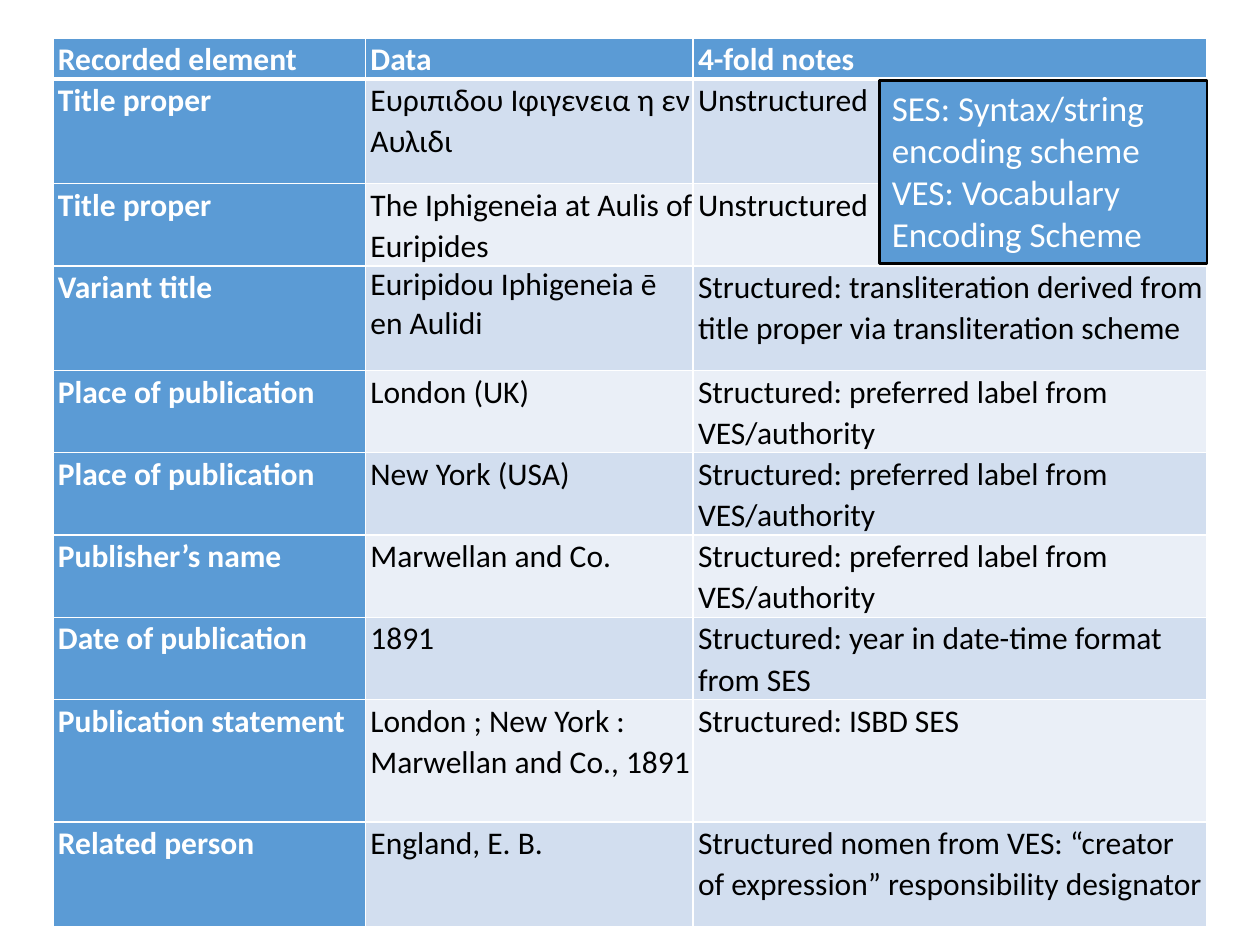
from lxml import etree
from pptx import Presentation
from pptx.dml.color import RGBColor
from pptx.enum import shapes, text
from pptx.oxml import ns
from pptx.util import Inches, Pt

THEME = {
    "font": "Calibri", "table_size": 18, "note_size": 20,
    "accent": "5B9BD5", "bands": ("D2DEEF", "EAEFF7"),
    "light": "FFFFFF", "dark": "000000",
}
AUTHORITY = "Structured: preferred label from VES/authority"
HEADER = ("Recorded element", "Data", "4-fold notes")
# Row height, then the three cells
RECORDS = [
    (0.83, "Title proper", "Ευριπιδου Ιφιγενεια η εν Αυλιδι", "Unstructured"),
    (0.65, "Title proper", "The Iphigeneia at Aulis of Euripides", "Unstructured"),
    (0.83, "Variant title", "Euripidou Iphigeneia ē en Aulidi",
     "Structured: transliteration derived from title proper via transliteration scheme"),
    (0.65, "Place of publication", "London (UK)", AUTHORITY),
    (0.65, "Place of publication", "New York (USA)", AUTHORITY),
    (0.65, "Publisher’s name", "Marwellan and Co.", AUTHORITY),
    (0.65, "Date of publication", "1891",
     "Structured: year in date-time format from SES"),
    (0.97, "Publication statement", "London ; New York : Marwellan and Co., 1891",
     "Structured: ISBD SES"),
    (0.83, "Related person", "England, E. B.",
     "Structured nomen from VES: “creator of expression” responsibility designator"),
]
SINGLE_SPACED = (3, 1)  # row and column of the variant title
NOTES = ("SES: Syntax/string encoding scheme", "VES: Vocabulary Encoding Scheme")

LEFT, TOP, HEADER_HEIGHT = 0.42, 0.3, 0.32
COLUMN_WIDTHS = (2.48, 2.6, 4.08)
NOTE_WIDTH, NOTE_HEIGHT = 2.6, 1.45


def colour(name):
    return RGBColor.from_string(name)


def add_text(paragraph, words, size, ink, bold=False):
    run = paragraph.add_run()
    run.text = words
    run.font.name = THEME["font"]
    run.font.size = Pt(size)
    run.font.bold = bold
    run.font.color.rgb = colour(ink)


def set_borders(cell, top, bottom):
    """Draw white borders; top and bottom are widths in points."""
    properties = cell._tc.get_or_add_tcPr()
    for side, width in (("L", 1), ("R", 1), ("T", top), ("B", bottom)):
        line = etree.SubElement(properties, ns.qn(f"a:ln{side}"), w=str(Pt(width)))
        fill = etree.SubElement(line, ns.qn("a:solidFill"))
        etree.SubElement(fill, ns.qn("a:srgbClr"), val=THEME["light"])


def add_record_table(slide):
    rows = [(HEADER_HEIGHT, *HEADER), *RECORDS]
    table = slide.shapes.add_table(
        len(rows), len(COLUMN_WIDTHS), Inches(LEFT), Inches(TOP),
        Inches(sum(COLUMN_WIDTHS)), Inches(sum(row[0] for row in rows))).table
    for column, width in zip(table.columns, COLUMN_WIDTHS):
        column.width = Inches(width)
    for row_index, (height, *values) in enumerate(rows):
        table.rows[row_index].height = Inches(height)
        for column_index, value in enumerate(values):
            cell = table.cell(row_index, column_index)
            heading = row_index == 0 or column_index == 0
            set_borders(cell, 3 if row_index == 1 else 1, 3 if row_index == 0 else 1)
            cell.fill.solid()
            cell.fill.fore_color.rgb = colour(
                THEME["accent"] if heading else THEME["bands"][(row_index - 1) % 2])
            cell.margin_left = Inches(0.04)
            cell.margin_top = cell.margin_right = cell.margin_bottom = 0
            paragraph = cell.text_frame.paragraphs[0]
            if (row_index, column_index) != SINGLE_SPACED:
                paragraph.line_spacing = 1.07
            add_text(paragraph, value, THEME["table_size"],
                     THEME["light"] if heading else THEME["dark"], heading)


def add_scheme_note(slide):
    """Place the abbreviations box flush with the table's right edge."""
    left = LEFT + sum(COLUMN_WIDTHS) - NOTE_WIDTH
    note = slide.shapes.add_shape(
        shapes.MSO_SHAPE.RECTANGLE, Inches(left), Inches(0.64),
        Inches(NOTE_WIDTH), Inches(NOTE_HEIGHT))
    note.shadow.inherit = False
    note.fill.solid()
    note.fill.fore_color.rgb = colour(THEME["accent"])
    note.line.color.rgb = colour(THEME["dark"])
    note.line.width = Pt(1.5)
    frame = note.text_frame
    frame.word_wrap = True
    frame.auto_size = text.MSO_AUTO_SIZE.SHAPE_TO_FIT_TEXT
    frame.vertical_anchor = text.MSO_ANCHOR.TOP
    for index, words in enumerate(NOTES):
        paragraph = frame.add_paragraph() if index else frame.paragraphs[0]
        paragraph.alignment = text.PP_ALIGN.LEFT
        add_text(paragraph, words, THEME["note_size"], THEME["light"])


def main():
    presentation = Presentation()
    presentation.slide_width, presentation.slide_height = Inches(10), Inches(7.5)
    slide = presentation.slides.add_slide(presentation.slide_layouts[6])
    add_record_table(slide)
    add_scheme_note(slide)
    presentation.save("out.pptx")


if __name__ == "__main__":
    main()
